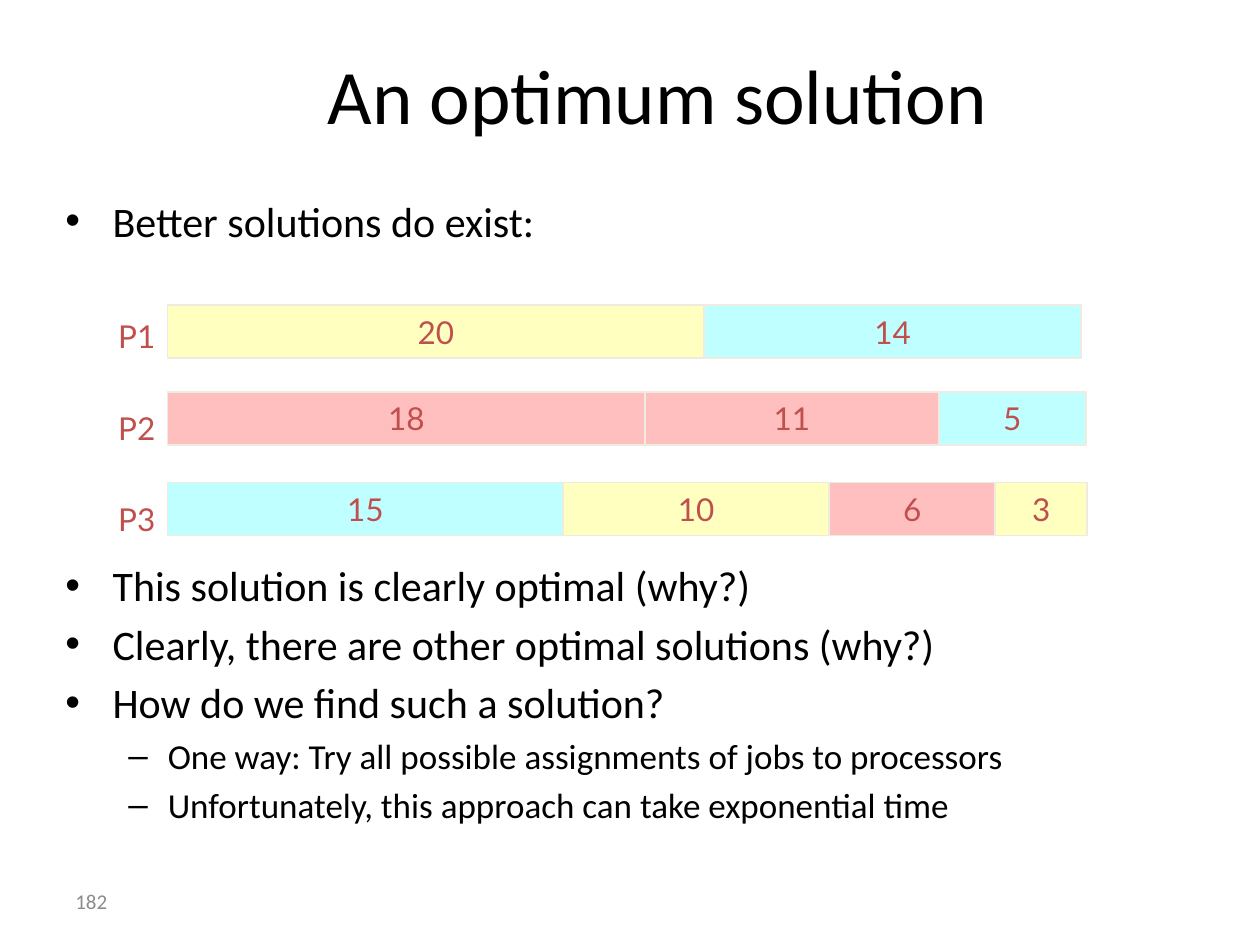
import pptx
import pptx.util
import pptx.dml.color
import pptx.enum.shapes
import pptx.enum.text
from lxml import etree

RGB = pptx.dml.color.RGBColor
ALIGN = pptx.enum.text.PP_ALIGN
ANCHOR = pptx.enum.text.MSO_ANCHOR
Pt = pptx.util.Pt

BLACK = RGB(0x00, 0x00, 0x00)
GRAY = RGB(0x8C, 0x8C, 0x8C)
RED = RGB(0xC0, 0x50, 0x4D)
EDGE = RGB(0xEE, 0xEC, 0xE1)
YELLOW = RGB(0xFF, 0xFF, 0xBF)
PINK = RGB(0xFF, 0xBF, 0xBF)
CYAN = RGB(0xBF, 0xFF, 0xFF)

# The slide is a grid of 100 columns and 75 rows.
COLS, ROWS = 100, 75
CELL = pptx.util.Inches(0.1)

# Bullet levels: sign, text size, left indent and hang in columns
LEVELS = [("•", 24, 3.75, 3.75), ("–", 20, 8.13, 3.13)]

# Each processor: name, row of its bar, jobs as (time, columns, colour)
PLAN = [
    ("P1", 2.5, [(20, 42.6, YELLOW), (14, 29.9, CYAN)]),
    ("P2", 9.4, [(18, 37.9, PINK), (11, 23.3, PINK), (5, 11.7, CYAN)]),
    ("P3", 16.6, [(15, 31.4, CYAN), (10, 21.1, YELLOW),
                  (6, 13.2, PINK), (3, 7.3, YELLOW)]),
]


def cells(*counts):
    """Turn grid counts into lengths."""
    return [round(n * CELL) for n in counts]


def add_run(para, text, size, color, font="Calibri"):
    run = para.add_run()
    run.text = text
    run.font.name = font
    run.font.size = Pt(size)
    run.font.color.rgb = color


def add_box(slide, box):
    """Add a wrapping text box and return its frame."""
    frame = slide.shapes.add_textbox(*cells(*box)).text_frame
    frame.word_wrap = True
    return frame


def next_para(frame, index):
    return frame.add_paragraph() if index else frame.paragraphs[0]


def add_title(slide, box, text):
    title = slide.shapes.title
    title.left, title.top, title.width, title.height = cells(*box)
    frame = title.text_frame
    frame.vertical_anchor = ANCHOR.MIDDLE
    para = frame.paragraphs[0]
    para.alignment = ALIGN.CENTER
    add_run(para, text, 44, BLACK)


def add_list(slide, box, items):
    """Add bulleted lines, given as (level, text)."""
    frame = add_box(slide, box)
    for index, (level, text) in enumerate(items):
        sign, size, left, hang = LEVELS[level]
        para = next_para(frame, index)
        para.level = level
        para.space_before = Pt(size * 0.2)
        add_run(para, text, size, BLACK)
        props = para._p.get_or_add_pPr()
        indent, back = cells(left, -hang)
        props.set("marL", str(indent))
        props.set("indent", str(back))
        tag = pptx.oxml.ns.qn
        etree.SubElement(props, tag("a:buFont"), typeface="Arial")
        etree.SubElement(props, tag("a:buChar"), char=sign)


def add_job(slide, box, time, color):
    bar = slide.shapes.add_shape(
        pptx.enum.shapes.MSO_SHAPE.RECTANGLE, *cells(*box))
    bar.shadow.inherit = False
    bar.fill.solid()
    bar.fill.fore_color.rgb = color
    bar.line.color.rgb = EDGE
    bar.line.width = Pt(1)
    frame = bar.text_frame
    frame.word_wrap = False
    frame.vertical_anchor = ANCHOR.MIDDLE
    para = frame.paragraphs[0]
    para.alignment = ALIGN.CENTER
    add_run(para, str(time), 18, RED, "Lato")


def add_plan(slide, box):
    """Draw one row of job bars for each processor, names at the left."""
    left, top, _, high = box
    names = add_box(slide, (left, top, 6.6, high))
    for index, (name, row, jobs) in enumerate(PLAN):
        para = next_para(names, index)
        para.line_spacing = 2.0
        para.space_before = Pt(9)
        add_run(para, name, 18, RED, "Lato")
        start = left + 4.9
        for time, width, color in jobs:
            add_job(slide, (start, top + row, width, 4.2), time, color)
            start += width


def add_number(slide, box, text):
    frame = add_box(slide, box)
    frame.vertical_anchor = ANCHOR.MIDDLE
    add_run(frame.paragraphs[0], text, 12, GRAY)


def main():
    deck = pptx.Presentation()
    deck.slide_width, deck.slide_height = cells(COLS, ROWS)
    slide = deck.slides.add_slide(deck.slide_layouts[5])
    add_title(slide, (9.6, 3.3, 85.2, 8.3), "An optimum solution")
    add_list(slide, (4.2, 15, 93.8, 5.8), [(0, "Better solutions do exist:")])
    add_plan(slide, (8.4, 21.7, 77.9, 22.2))
    add_list(slide, (4.2, 43.9, 93.8, 23.1), [
        (0, "This solution is clearly optimal (why?)"),
        (0, "Clearly, there are other optimal solutions (why?)"),
        (0, "How do we find such a solution?"),
        (1, "One way: Try all possible assignments of jobs to processors"),
        (1, "Unfortunately, this approach can take exponential time"),
    ])
    add_number(slide, (5, 69.5, 23.3, 4), "182")
    deck.save("out.pptx")


if __name__ == "__main__":
    main()
